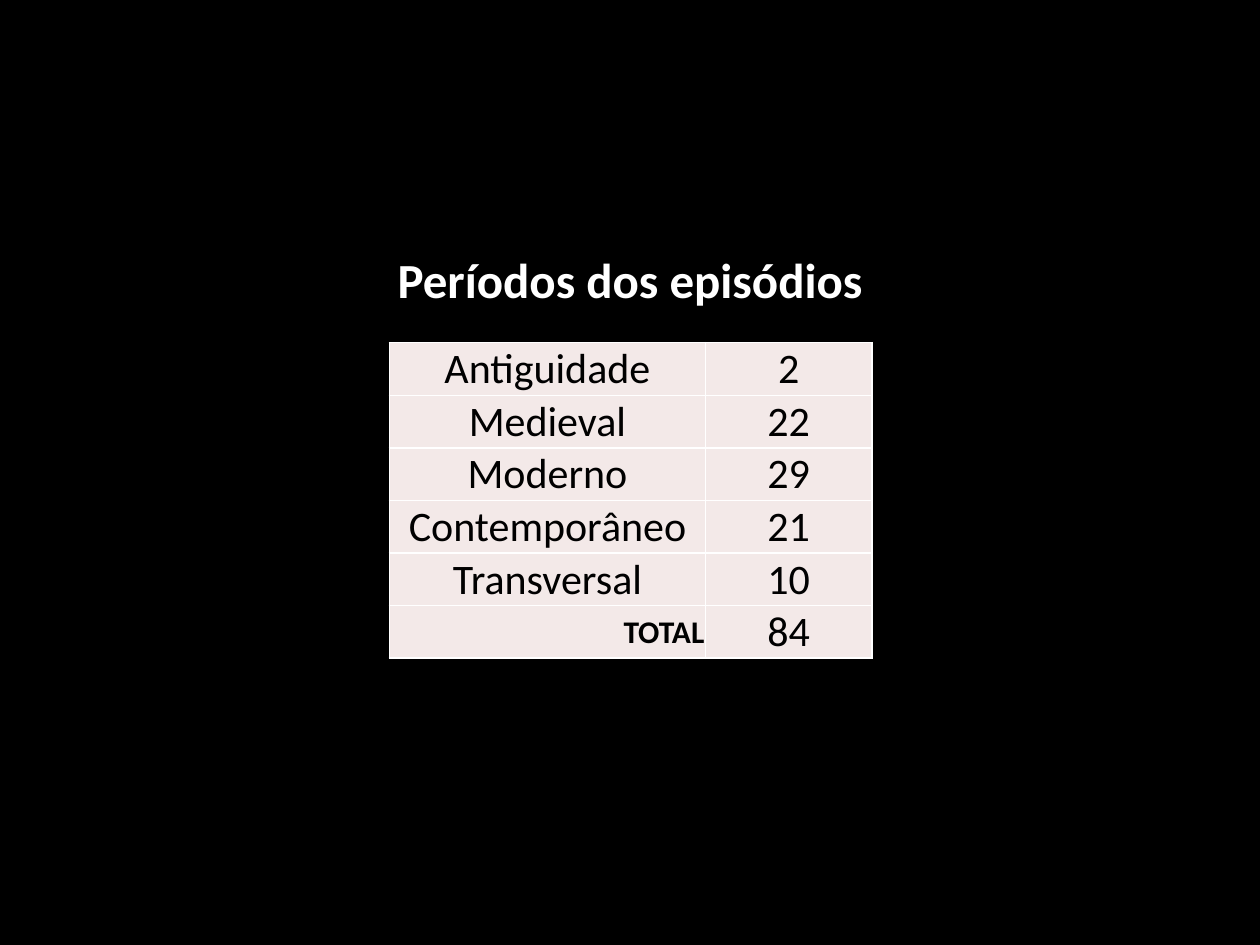
from dataclasses import dataclass

import lxml.etree
import pptx
import pptx.dml.color
import pptx.enum.text
import pptx.oxml.ns
import pptx.util

Inches = pptx.util.Inches
Pt = pptx.util.Pt
Align = pptx.enum.text.PP_ALIGN
Anchor = pptx.enum.text.MSO_ANCHOR
qn = pptx.oxml.ns.qn

FONT = "Calibri"
COLORS = {"back": "000000", "title": "FFFFFF", "text": "000000",
          "cell": "F3E9E8", "line": "FFFFFF"}
WIDTHS = (2.51, 1.32)
ROW_HIGH = 0.41


@dataclass
class Row:
    label: str
    count: int
    total: bool = False


ROWS = [
    Row("Antiguidade", 2),
    Row("Medieval", 22),
    Row("Moderno", 29),
    Row("Contemporâneo", 21),
    Row("Transversal", 10),
    Row("TOTAL", 84, total=True),
]


def color(name: str) -> pptx.dml.color.RGBColor:
    return pptx.dml.color.RGBColor.from_string(COLORS[name])


def write(frame, text: str, size: int, ink: str, bold: bool = False,
          align=Align.CENTER) -> None:
    """Set one line of text and format its run."""
    frame.text = text
    line = frame.paragraphs[0]
    line.alignment = align
    font = line.runs[0].font
    font.name, font.size, font.bold = FONT, Pt(size), bold
    font.color.rgb = color(ink)


def border(cell) -> None:
    """Draw a thin line on all four sides of a cell."""
    props = cell._tc.get_or_add_tcPr()
    for side in ("a:lnL", "a:lnR", "a:lnT", "a:lnB"):
        line = lxml.etree.SubElement(props, qn(side), w=str(Pt(1)))
        fill = lxml.etree.SubElement(line, qn("a:solidFill"))
        lxml.etree.SubElement(fill, qn("a:srgbClr"), val=COLORS["line"])


def draw_cell(cell, text: str, total: bool = False) -> None:
    cell.margin_left = cell.margin_right = cell.margin_top = Inches(0.01)
    cell.margin_bottom = Inches(0)
    cell.vertical_anchor = Anchor.MIDDLE
    border(cell)
    cell.fill.solid()
    cell.fill.fore_color.rgb = color("cell")
    write(cell.text_frame, text, 18 if total else 24, "text", total,
          Align.RIGHT if total else Align.CENTER)


def draw_table(slide, rows: list[Row]) -> None:
    frame = slide.shapes.add_table(
        len(rows), len(WIDTHS), Inches(3.09), Inches(2.72),
        Inches(sum(WIDTHS)), Inches(ROW_HIGH * len(rows)))
    table = frame.table
    table.first_row = table.horz_banding = False
    for col, width in zip(table.columns, WIDTHS):
        col.width = Inches(width)
    for i, row in enumerate(rows):
        table.rows[i].height = Inches(ROW_HIGH)
        draw_cell(table.cell(i, 0), row.label, row.total)
        draw_cell(table.cell(i, 1), str(row.count))


def draw_title(slide, text: str) -> None:
    box = slide.shapes.add_textbox(
        Inches(2.5), Inches(1.93), Inches(5), Inches(0.57))
    frame = box.text_frame
    frame.word_wrap = True
    frame.auto_size = pptx.enum.text.MSO_AUTO_SIZE.SHAPE_TO_FIT_TEXT
    write(frame, text, 28, "title", bold=True)


def main() -> None:
    deck = pptx.Presentation()
    deck.slide_width, deck.slide_height = Inches(10), Inches(7.5)
    slide = deck.slides.add_slide(deck.slide_layouts[6])

    # Background
    fill = slide.background.fill
    fill.solid()
    fill.fore_color.rgb = color("back")

    # Periods and their counts
    draw_table(slide, ROWS)
    draw_title(slide, "Períodos dos episódios")
    deck.save("out.pptx")


if __name__ == "__main__":
    main()
